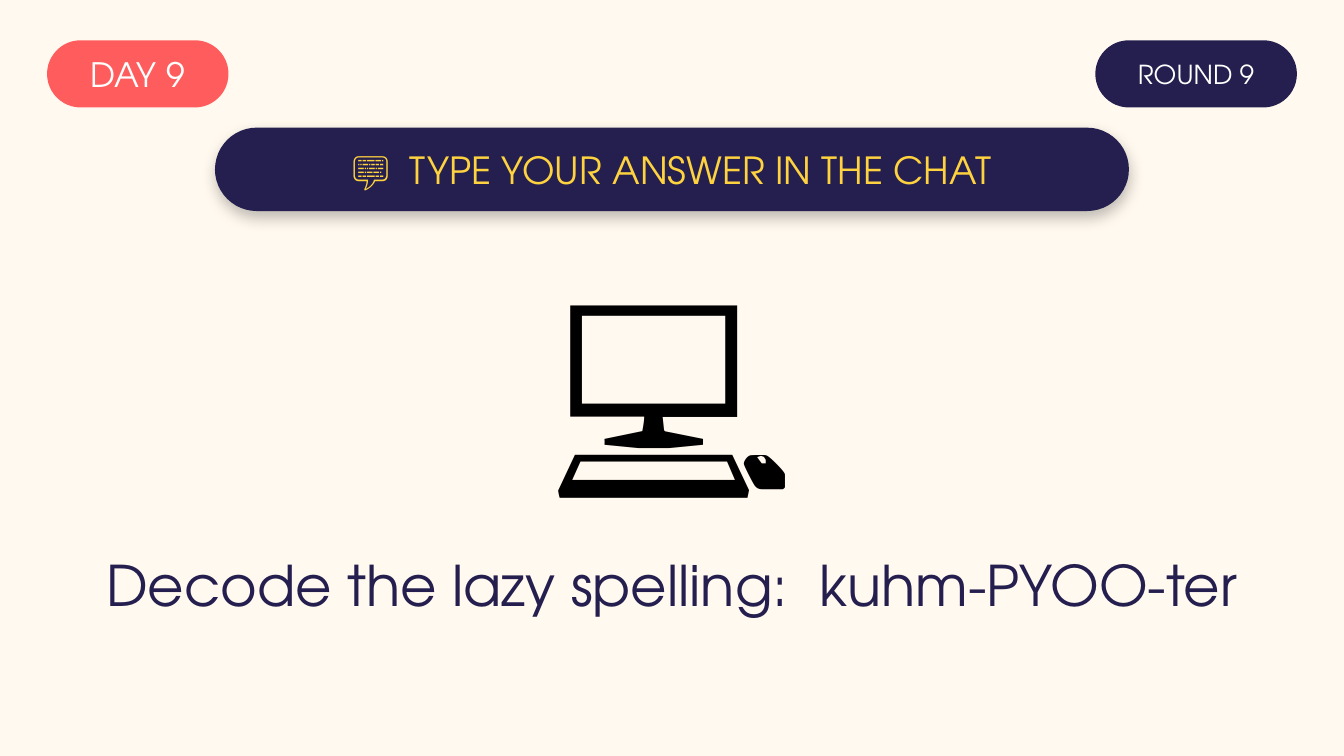
from lxml import etree
from pptx import Presentation
from pptx import util as u
from pptx.dml.color import RGBColor
from pptx.enum import shapes, text
from pptx.oxml.ns import qn

PX = 4572
COLORS = {
    "cream": "FFF9EF",
    "coral": "FF5D5D",
    "navy": "241F4E",
    "yellow": "FFD23F",
    "white": "FFFFFF",
    "black": "000000",
}


def rgb(name):
    return RGBColor.from_string(COLORS[name])


class QuizSlide:
    font = "TeX Gyre Adventor"

    def __init__(self, width, height, background):
        self.deck = Presentation()
        self.deck.slide_width = u.Emu(width * PX)
        self.deck.slide_height = u.Emu(height * PX)
        self.slide = self.deck.slides.add_slide(self.deck.slide_layouts[6])
        fill = self.slide.background.fill
        fill.solid()
        fill.fore_color.rgb = rgb(background)

    def set_words(self, frame, words, size, color, font=None, **frame_format):
        frame_format = {
            "word_wrap": True,
            "vertical_anchor": text.MSO_ANCHOR.MIDDLE,
            **frame_format,
        }
        for key, value in frame_format.items():
            setattr(frame, key, value)
        line = frame.paragraphs[0]
        line.alignment = text.PP_ALIGN.CENTER
        run = line.add_run()
        run.text = words
        for key, value in {"name": font or self.font, "size": u.Pt(size)}.items():
            setattr(run.font, key, value)
        run.font.color.rgb = rgb(color)

    def pill(self, box, fill, words, size, color):
        pill = self.slide.shapes.add_shape(
            shapes.MSO_SHAPE.ROUNDED_RECTANGLE, *(n * PX for n in box))
        pill.adjustments[0] = 0.5
        pill.shadow.inherit = False
        pill.fill.solid()
        pill.fill.fore_color.rgb = rgb(fill)
        pill.line.fill.background()
        margins = {f"margin_{side}": 0 for side in ("left", "top", "right", "bottom")}
        self.set_words(pill.text_frame, words, size, color, **margins)
        return pill

    def drop_shadow(self, pill, blur, distance, opacity):
        effects = pill._element.spPr.find(qn("a:effectLst"))
        shadow = etree.SubElement(
            effects, qn("a:outerShdw"), blurRad=str(u.Pt(blur)),
            dist=str(u.Pt(distance)), dir=str(90 * 60000), rotWithShape="0")
        tint = etree.SubElement(shadow, qn("a:srgbClr"), val=COLORS["black"])
        etree.SubElement(tint, qn("a:alpha"), val=str(opacity * 1000))

    def label(self, box, words, size, color, **style):
        label = self.slide.shapes.add_textbox(*(n * PX for n in box))
        self.set_words(label.text_frame, words, size, color, **style)


def main():
    quiz = QuizSlide(2000, 1125, "cream")
    quiz.pill((70, 60, 270, 100), "coral", "DAY 9", 18, "white")
    quiz.pill((1630, 60, 300, 100), "navy", "ROUND 9", 14, "white")
    prompt = quiz.pill((320, 190, 1360, 124), "navy",
                       "💬  TYPE YOUR ANSWER IN THE CHAT", 20, "yellow")
    quiz.drop_shadow(prompt, blur=8, distance=3, opacity=25)
    quiz.label((0, 340, 2000, 370), "💻", 122, "black", font="Calibri",
               vertical_anchor=text.MSO_ANCHOR.TOP)
    quiz.label((100, 770, 1800, 200),
               "Decode the lazy spelling:  kuhm-PYOO-ter", 30, "navy")
    quiz.deck.save("out.pptx")


if __name__ == "__main__":
    main()
